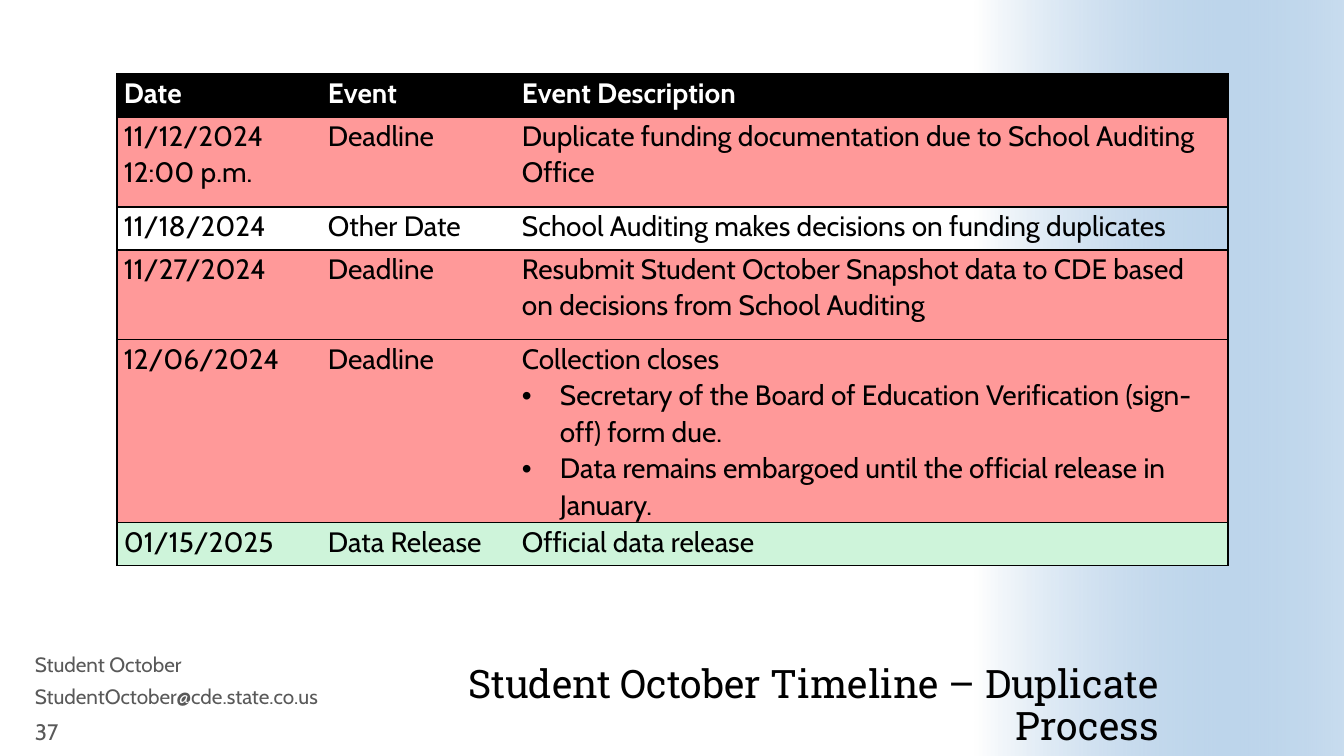
from lxml import etree
from pptx import Presentation
from pptx.dml.color import RGBColor
from pptx.enum.shapes import MSO_SHAPE
from pptx.enum.text import MSO_ANCHOR, PP_ALIGN
from pptx.oxml.ns import qn
from pptx.util import Emu, Pt

RECTANGLE = MSO_SHAPE.RECTANGLE
TOP, MIDDLE, BOTTOM = MSO_ANCHOR.TOP, MSO_ANCHOR.MIDDLE, MSO_ANCHOR.BOTTOM
LEFT, RIGHT = PP_ALIGN.LEFT, PP_ALIGN.RIGHT

# Content
TITLE = "Student October Timeline – Duplicate Process"
FOOTER = ["Student October", "StudentOctober@cde.state.co.us"]
PAGE_NUMBER = "37"
# Each row: kind, height, lines of the date, event, description, bullets
ROWS = [
    ("header", 43, ["Date"], "Event", "Event Description", []),
    ("deadline", 90, ["11/12/2024", "12:00 p.m."], "Deadline",
     "Duplicate funding documentation due to School Auditing Office", []),
    ("other", 43, ["11/18/2024"], "Other Date",
     "School Auditing makes decisions on funding duplicates", []),
    ("deadline", 90, ["11/27/2024"], "Deadline",
     "Resubmit Student October Snapshot data to CDE based on decisions from School Auditing", []),
    ("deadline", 183, ["12/06/2024"], "Deadline", "Collection closes",
     ["Secretary of the Board of Education Verification (sign-off) form due.",
      "Data remains embargoed until the official release in January."]),
    ("release", 43, ["01/15/2025"], "Data Release", "Official data release", []),
]
COLUMN_WIDTHS = [204, 194, 713]


class Theme:
    heading_font, body_font = "Roboto Slab", "Cabin"
    title_size, table_size, footer_size, number_size = 28, 20, 14.8, 16
    black, white, grey, blue = "000000", "FFFFFF", "595959", "488BC9"
    row_fills = {"header": "000000", "deadline": "FF9999", "other": None, "release": "CEF4DA"}


def px(value):
    return Emu(round(value * 914400 / 100.8))


def style(paragraph, size, color, font=Theme.body_font, bold=False):
    for run in paragraph.runs:
        run.font.name = font
        run.font.size = Pt(size)
        run.font.bold = bold
        run.font.color.rgb = RGBColor.from_string(color)


def add_text(slide, box, text, size, color, font=Theme.body_font,
             anchor=TOP, align=LEFT, spacing=1.0, inset=None):
    frame = slide.shapes.add_textbox(*map(px, box)).text_frame
    frame.word_wrap = True
    frame.vertical_anchor = anchor
    if inset is not None:
        frame.margin_left = frame.margin_right = frame.margin_top = frame.margin_bottom = px(inset)
    frame.text = text
    paragraph = frame.paragraphs[0]
    paragraph.alignment = align
    paragraph.line_spacing = spacing
    style(paragraph, size, color, font)


def add_bullet(paragraph, indent):
    properties = paragraph._p.get_or_add_pPr()
    properties.set("marL", str(px(indent)))
    properties.set("indent", str(-px(indent)))
    etree.SubElement(properties, qn("a:buFont")).set("typeface", "Arial")
    etree.SubElement(properties, qn("a:buChar")).set("char", "•")


def set_borders(cell, drawn_sides):
    properties = cell._tc.get_or_add_tcPr()
    for position, side in enumerate("LRTB"):
        line = etree.Element(qn(f"a:ln{side}"), w=str(Pt(1)))
        if side in drawn_sides:
            fill = etree.SubElement(line, qn("a:solidFill"))
            etree.SubElement(fill, qn("a:srgbClr")).set("val", Theme.black)
        else:
            etree.SubElement(line, qn("a:noFill"))
        properties.insert(position, line)


def fill_cell(cell, kind, lines, bullets, sides):
    cell.margin_left = cell.margin_right = px(7)
    cell.margin_top = cell.margin_bottom = 0
    cell.text = "\n".join(lines + bullets)
    header = kind == "header"
    for index, paragraph in enumerate(cell.text_frame.paragraphs):
        paragraph.line_spacing = 1.07
        if index >= len(lines):
            add_bullet(paragraph, 38)
        style(paragraph, Theme.table_size, Theme.white if header else Theme.black, bold=header)
    color = Theme.row_fills[kind]
    if color:
        cell.fill.solid()
        cell.fill.fore_color.rgb = RGBColor.from_string(color)
    else:
        cell.fill.background()
    set_borders(cell, sides)


def add_side_band(slide):
    # Turned a quarter so that the fade runs from left to right
    band = slide.shapes.add_shape(RECTANGLE, px(781), px(194), px(756), px(369))
    band.rotation = 270
    band.shadow.inherit = False
    band.line.fill.background()
    band.fill.gradient()
    band.fill.gradient_angle = 270
    for stop, position, color in zip(band.fill.gradient_stops, (0, 1), (Theme.white, Theme.blue)):
        stop.position = position
        stop.color.rgb = RGBColor.from_string(color)
    last_color = list(band._element.spPr.iter(qn("a:srgbClr")))[-1]
    etree.SubElement(last_color, qn("a:alpha")).set("val", "30000")


def add_timeline(slide):
    heights = [row[1] for row in ROWS]
    table = slide.shapes.add_table(len(ROWS), len(COLUMN_WIDTHS), px(117), px(74),
                                   px(sum(COLUMN_WIDTHS)), px(sum(heights))).table
    table.first_row = table.horz_banding = False
    for column, width in zip(table.columns, COLUMN_WIDTHS):
        column.width = px(width)
    for row, (kind, height, date, event, description, bullets) in zip(table.rows, ROWS):
        row.height = px(height)
        parts = [(date, [], "LTB"), ([event], [], "TB"), ([description], bullets, "RTB")]
        for cell, part in zip(row.cells, parts):
            fill_cell(cell, kind, *part)


def main():
    presentation = Presentation()
    presentation.slide_width, presentation.slide_height = px(1344), px(756)
    slide = presentation.slides.add_slide(presentation.slide_layouts[6])

    # Background band, then title
    add_side_band(slide)
    add_text(slide, (429, 650, 730, 99), TITLE, Theme.title_size, Theme.black,
             Theme.heading_font, BOTTOM, RIGHT, 0.9, 0)

    # Footer lines and page number
    for index, text in enumerate(FOOTER):
        add_text(slide, (25, 652 + 32 * index, 392, 31), text,
                 Theme.footer_size, Theme.grey, spacing=0.8)
    add_text(slide, (25, 716, 86, 31), PAGE_NUMBER, Theme.number_size, Theme.grey, anchor=MIDDLE)

    # Timeline table
    add_timeline(slide)
    presentation.save("out.pptx")


if __name__ == "__main__":
    main()
